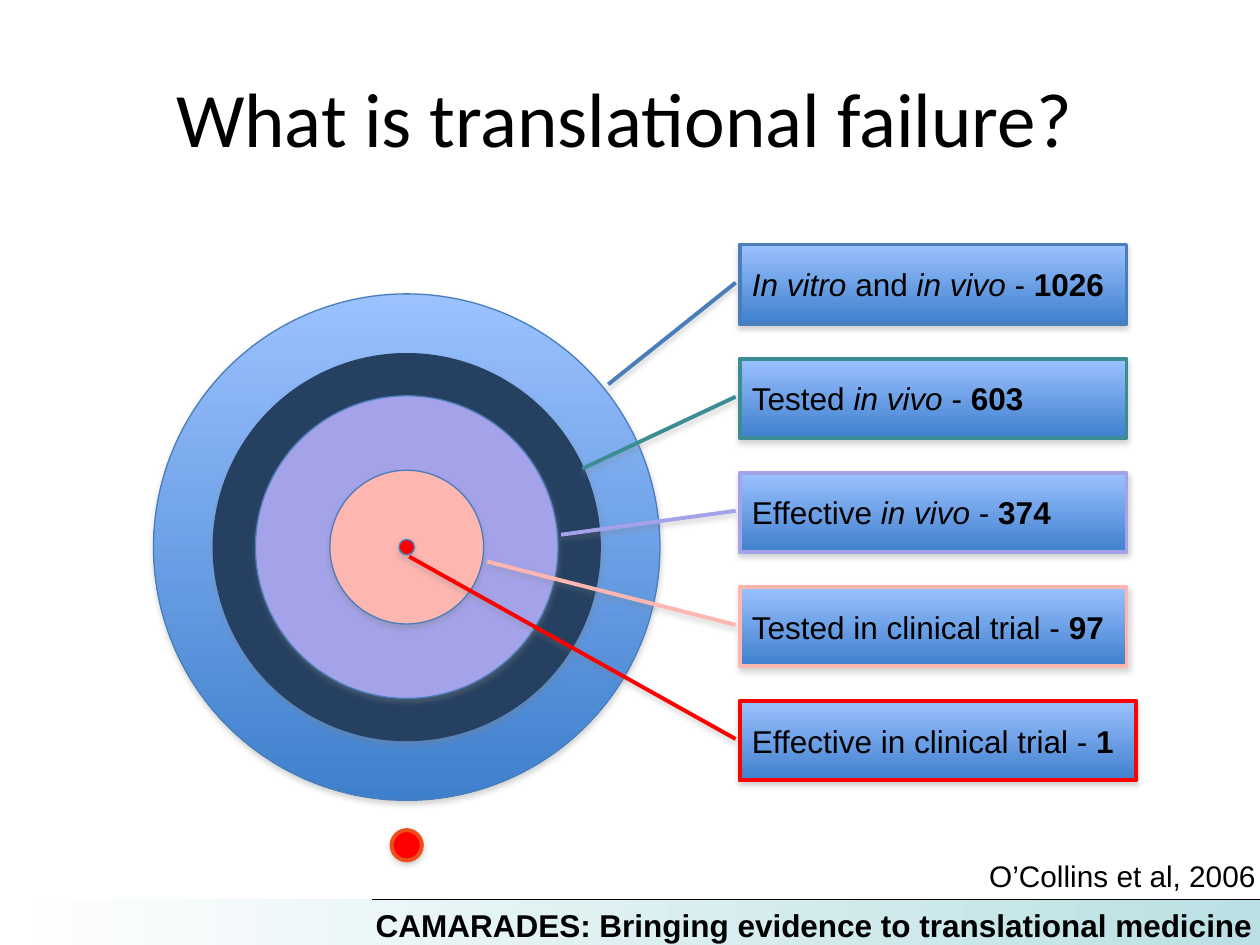
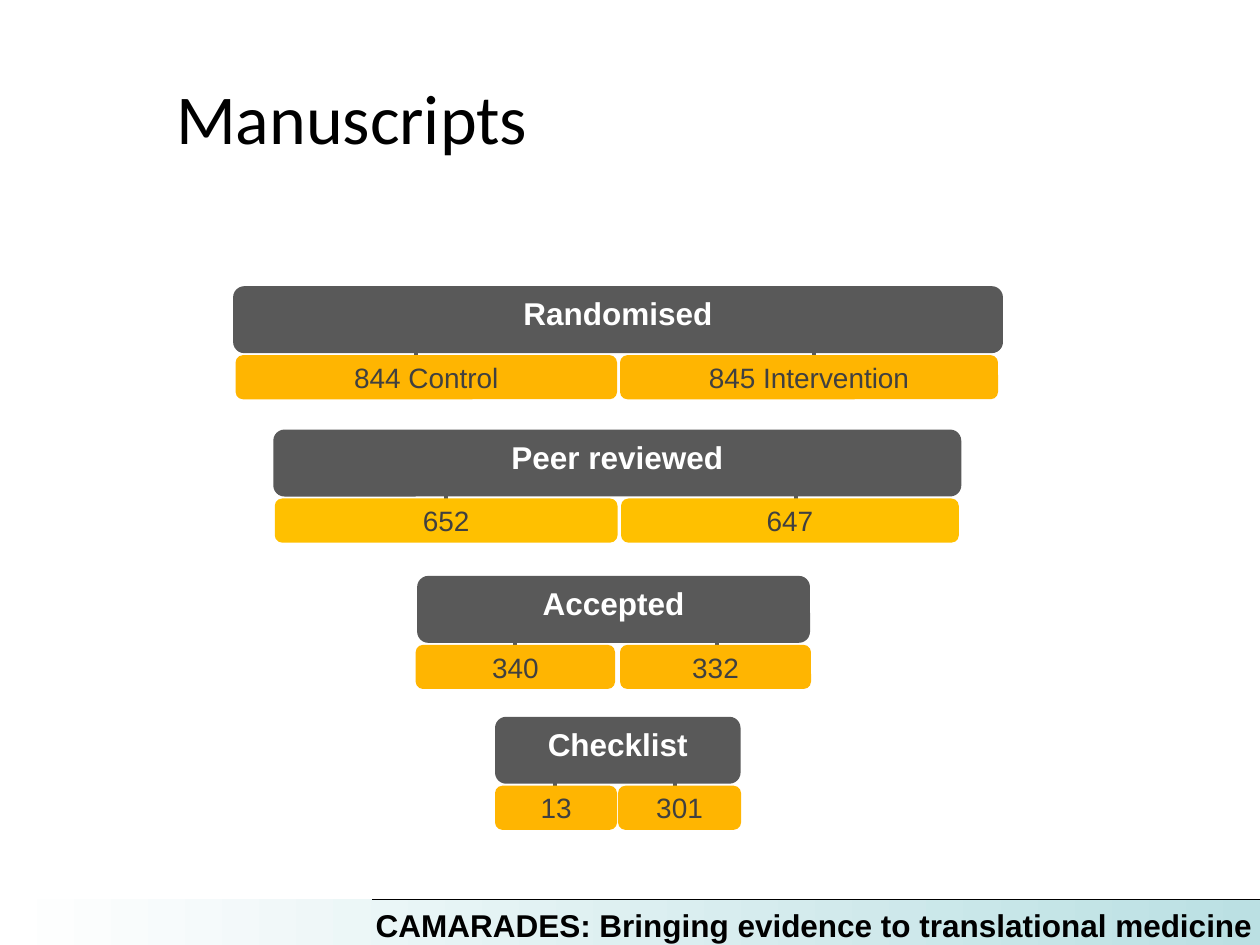
from lxml import etree
from pptx import Presentation
from pptx.dml.color import RGBColor
from pptx.enum import shapes, text
from pptx.oxml.ns import qn
from pptx.util import Cm, Pt

# ---- Content (lengths in cm) ----
COLOURS = {
    "black": "000000", "white": "FFFFFF", "mint": "BBE0E3",
    "sky": "9BC1FF", "blue": "3F80CD", "outline": "4A7EBB",
    "navy": "254061", "teal": "3C8C93", "lilac": "A4A2E9",
    "pink": "FEB6B0", "red": "FF0000", "orange": "EC4F1C",
    "grey": "595959", "dark": "404040", "amber": "FFB501", "gold": "FFC000",
}
BLUES = ("sky", "blue")
FOOTER = "CAMARADES: Bringing evidence to translational medicine"
CITATION = "O’Collins et al, 2006"

# Centre height, diameter, fill, outline, outline width
TARGET_X = 8.2
CIRCLES = [
    (11.03, 10.21, BLUES, "outline", 0.75),
    (11.03, 7.8, "navy", "navy", 0.75),
    (11.03, 6.1, "lilac", "outline", 0.75),
    (11.03, 3.1, "pink", "outline", 0.75),
    (11.03, 0.31, "red", "outline", 0.75),
    (17.04, 0.61, "red", "orange", 2.25),
]

# Spans with style letters, outline, box width, point the leader reaches
CALLOUTS = [
    ([("In vitro ", "i"), ("and ", ""), ("in vivo ", "i"), ("- ", ""), ("1026", "b")],
     "outline", 7.8, (12.26, 7.75)),
    ([("Tested ", ""), ("in vivo ", "i"), ("- ", ""), ("603", "b")],
     "teal", 7.8, (11.74, 9.45)),
    ([("Effective ", ""), ("in vivo ", "i"), ("- ", ""), ("374", "b")],
     "lilac", 7.8, (11.31, 10.78)),
    ([("Tested in clinical trial - ", ""), ("97", "b")],
     "pink", 7.8, (9.82, 11.32)),
    ([("Effective in clinical trial - ", ""), ("1", "b")],
     "red", 8.0, (8.25, 11.22)),
]

# Each stage: header, its left, top, width; then cells (text, left, right, link x)
STAGES = [
    ("Randomised", 4.7, 5.77, 15.52, "amber",
     [("844 Control", 4.75, 12.44, 8.38), ("845 Intervention", 12.5, 20.12, 16.41)]),
    ("Peer reviewed", 5.51, 8.66, 13.87, "gold",
     [("652", 5.54, 12.45, 8.99), ("647", 12.52, 19.33, 16.05)]),
    ("Accepted", 8.41, 11.61, 7.92, "amber",
     [("340", 8.38, 12.4, 10.39), ("332", 12.5, 16.35, 14.45)]),
    ("Checklist", 9.98, 14.45, 4.95, "amber",
     [("13", 9.98, 12.44, 11.18), ("301", 12.46, 14.94, 13.61)]),
]


# ---- Helpers ----
def colour(name):
    return RGBColor.from_string(COLOURS[name])


def write(shape, content, size=18, font="Arial", ink="black", bold=False,
          align="LEFT", anchor="MIDDLE", inset=(0.25, 0.13)):
    """Fill a shape with one paragraph, given as a string or styled spans."""
    frame = shape.text_frame
    frame.word_wrap = True
    frame.vertical_anchor = getattr(text.MSO_ANCHOR, anchor)
    frame.margin_left = frame.margin_right = Cm(inset[0])
    frame.margin_top = frame.margin_bottom = Cm(inset[1])
    para = frame.paragraphs[0]
    para.alignment = getattr(text.PP_ALIGN, align)
    for words, style in [(content, "")] if isinstance(content, str) else content:
        span = para.add_run()
        span.text = words
        span.font.name, span.font.size = font, Pt(size)
        span.font.color.rgb = colour(ink)
        span.font.bold = bold or "b" in style
        span.font.italic = "i" in style


def add_box(page, left, top, width, height, content, **style):
    box = page.shapes.add_textbox(Cm(left), Cm(top), Cm(width), Cm(height))
    write(box, content, **style)


def add_shape(page, kind, left, top, width, height, fill, line=None,
              weight=0.75, angle=270, shadow=False):
    shape = page.shapes.add_shape(getattr(shapes.MSO_SHAPE, kind),
                                  Cm(left), Cm(top), Cm(width), Cm(height))
    if isinstance(fill, tuple):
        shape.fill.gradient()
        shape.fill.gradient_angle = angle
        for stop, position, name in zip(shape.fill.gradient_stops, (0, 1), fill):
            stop.position = position
            stop.color.rgb = colour(name)
    else:
        shape.fill.solid()
        shape.fill.fore_color.rgb = colour(fill)
    if line:
        shape.line.color.rgb = colour(line)
        shape.line.width = Pt(weight)
    else:
        shape.line.fill.background()
    shape.shadow.inherit = False
    if shadow:
        add_shadow(shape)
    return shape


def add_shadow(shape):
    effects = shape._element.spPr.find(qn("a:effectLst"))
    outer = etree.SubElement(effects, qn("a:outerShdw"), blurRad="40000",
                             dist="23000", dir="5400000", rotWithShape="0")
    tone = etree.SubElement(outer, qn("a:srgbClr"), val="808080")
    etree.SubElement(tone, qn("a:alpha"), val="35000")


def add_line(page, start, end, ink, weight):
    line = page.shapes.add_connector(shapes.MSO_CONNECTOR.STRAIGHT,
                                     *map(Cm, start + end))
    line.line.color.rgb = colour(ink)
    line.line.width = Pt(weight)
    etree.SubElement(line._element.spPr, qn("a:effectLst"))


def add_page(deck, title, size):
    """Blank page with the shared footer band and title."""
    page = deck.slides.add_slide(deck.slide_layouts[6])
    add_shape(page, "RECTANGLE", 0, 18.13, 25.4, 0.92, ("white", "mint"), angle=0)
    add_box(page, 7.11, 18.13, 18.39, 1.02, FOOTER, bold=True,
            align="RIGHT", anchor="TOP")
    add_line(page, (7.5, 18.13), (25.4, 18.13), "black", 0.75)
    add_box(page, 3.3, 0.76, 20.4, 3.18, title, size=size, font="Calibri")
    return page


# ---- Slides ----
def build_target(deck):
    page = add_page(deck, "What is translational failure?", 44)
    add_box(page, 18.31, 17.3, 7.01, 0.89, CITATION, size=17,
            align="RIGHT", anchor="TOP", inset=(0, 0))
    for middle, diameter, fill, line, weight in CIRCLES:
        add_shape(page, "OVAL", TARGET_X - diameter / 2, middle - diameter / 2,
                  diameter, diameter, fill, line, weight, shadow=True)

    left, first_top, pitch, height = 14.91, 4.93, 2.3, 1.6
    for index, (spans, line, width, (tip_x, tip_y)) in enumerate(CALLOUTS):
        top = first_top + index * pitch
        callout = add_shape(page, "LINE_CALLOUT_1", left, top, width, height,
                            BLUES, line, 2.25, shadow=True)
        leader = (0.48, -0.01, (tip_y - top) / height, (tip_x - left) / width)
        for number, value in enumerate(leader):
            callout.adjustments[number] = value
        write(callout, spans)


def build_manuscripts(deck):
    page = add_page(deck, "Manuscripts", 40)
    header_height, cell_drop, cell_height = 1.35, 1.39, 0.89
    inset = (0.18, 0.1)
    for name, left, top, width, fill, cells in STAGES:
        cell_top = top + cell_drop
        for _, _, _, link in cells:
            add_line(page, (link, cell_top - 0.4), (link, cell_top + 0.2), "grey", 2.25)
        header = add_shape(page, "ROUNDED_RECTANGLE", left, top, width,
                           header_height, "grey")
        write(header, name, ink="white", bold=True, align="CENTER",
              anchor="TOP", inset=inset)
        for label, start, end, _ in cells:
            cell = add_shape(page, "ROUNDED_RECTANGLE", start, cell_top,
                             end - start, cell_height, fill)
            write(cell, label, size=16, ink="dark", align="CENTER", inset=inset)


def main():
    deck = Presentation()
    deck.slide_width, deck.slide_height = Cm(25.4), Cm(19.05)
    build_target(deck)
    build_manuscripts(deck)
    deck.save("out.pptx")


if __name__ == "__main__":
    main()
